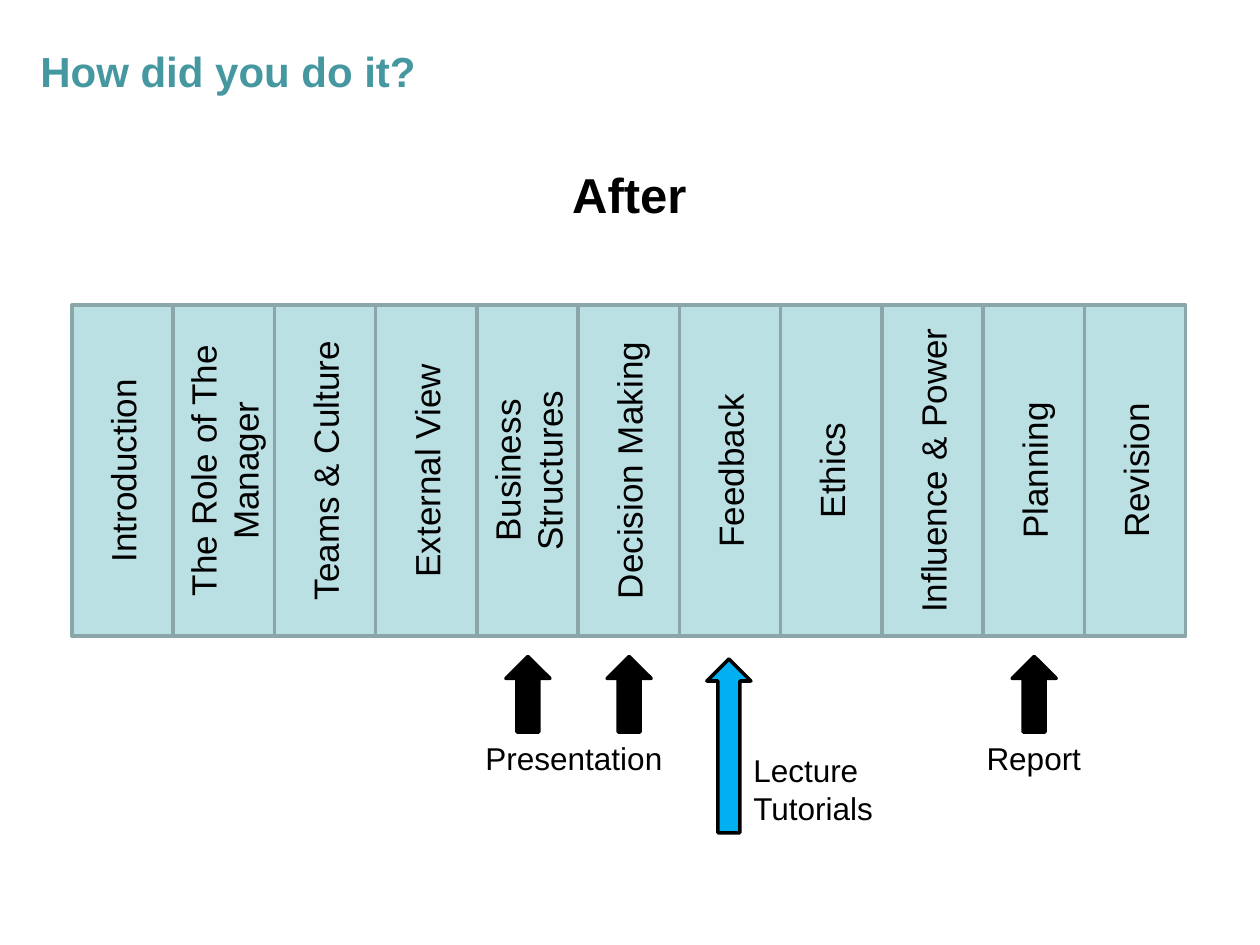
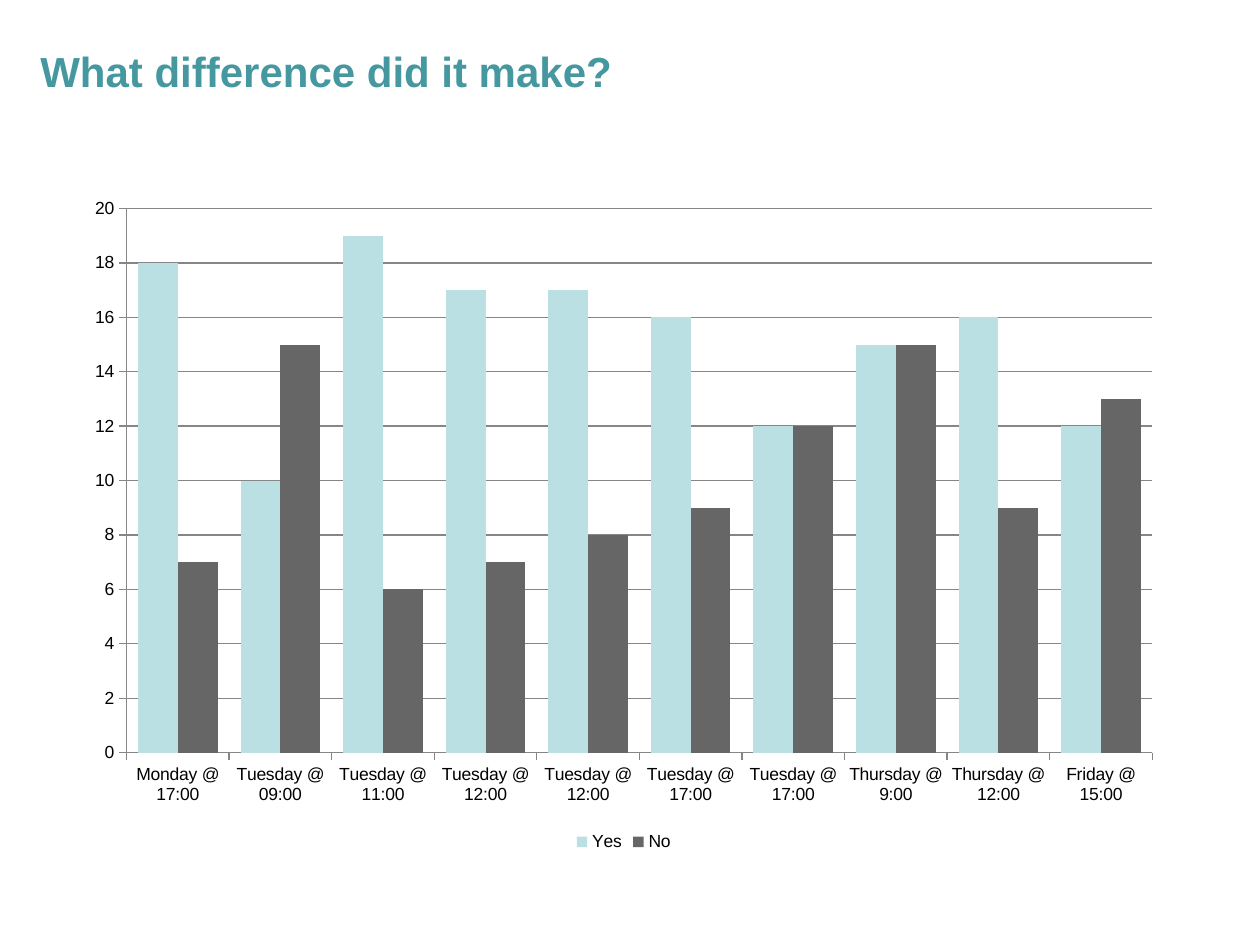
from dataclasses import dataclass

from pptx import Presentation
from pptx.chart.data import CategoryChartData
from pptx.dml.color import RGBColor
from pptx.enum.chart import XL_CHART_TYPE, XL_LEGEND_POSITION, XL_TICK_MARK
from pptx.enum.shapes import MSO_SHAPE
from pptx.enum.text import MSO_ANCHOR, MSO_AUTO_SIZE, PP_ALIGN
from pptx.util import Inches, Pt


@dataclass(frozen=True)
class Theme:
    font: str = "Arial"
    title: str = "4597A0"
    text: str = "000000"
    primary: str = "BBE0E3"
    secondary: str = "666666"
    outline: str = "8AA6A8"
    highlight: str = "00B0F0"
    grid: str = "868686"
    title_size: int = 24
    heading_size: int = 28
    step_size: int = 20
    label_size: int = 18
    chart_size: int = 10
    line_width: int = 2


class Deck:
    def __init__(self, theme):
        self.theme = theme
        self.presentation = Presentation()
        self.presentation.slide_width = Inches(10)
        self.presentation.slide_height = Inches(7.5)
        self.slide = None

    def style_font(self, font, size, color, bold=False):
        font.name = self.theme.font
        font.size = Pt(size)
        font.bold = bold
        font.color.rgb = RGBColor.from_string(color)

    def add_lines(self, text_frame, lines, size, color, align, bold=False):
        for index, line in enumerate(lines):
            paragraph = text_frame.paragraphs[0] if index == 0 else text_frame.add_paragraph()
            paragraph.alignment = align
            run = paragraph.add_run()
            run.text = line
            self.style_font(run.font, size, color, bold)

    def add_slide(self, title, title_width):
        layout = self.presentation.slide_layouts[5]
        self.slide = self.presentation.slides.add_slide(layout)
        shape = self.slide.shapes.title
        shape.left, shape.top = Inches(0.22), Inches(0.31)
        shape.width, shape.height = Inches(title_width), Inches(0.5)
        text_frame = shape.text_frame
        text_frame.auto_size = MSO_AUTO_SIZE.NONE
        text_frame.word_wrap = False
        text_frame.vertical_anchor = MSO_ANCHOR.TOP
        self.add_lines(text_frame, [title], self.theme.title_size, self.theme.title,
                       PP_ALIGN.LEFT, True)

    def add_shape(self, kind, left, top, width, height, fill, line):
        shape = self.slide.shapes.add_shape(
            kind, Inches(left), Inches(top), Inches(width), Inches(height))
        shape.shadow.inherit = False
        shape.fill.solid()
        shape.fill.fore_color.rgb = RGBColor.from_string(fill)
        shape.line.color.rgb = RGBColor.from_string(line)
        shape.line.width = Pt(self.theme.line_width)
        return shape

    def add_step(self, text, left, top, width, height):
        shape = self.add_shape(MSO_SHAPE.RECTANGLE, left, top, width, height,
                               self.theme.primary, self.theme.outline)
        text_frame = shape.text_frame
        text_frame.word_wrap = True
        text_frame.vertical_anchor = MSO_ANCHOR.MIDDLE
        text_frame._txBody.bodyPr.set("vert", "vert270")
        self.add_lines(text_frame, [text], self.theme.step_size, self.theme.text,
                       PP_ALIGN.CENTER)

    def add_arrow(self, left, top, height, fill):
        self.add_shape(MSO_SHAPE.UP_ARROW, left, top, 0.35, height, fill, self.theme.text)

    def add_label(self, lines, left, top, width, height, size,
                  align=PP_ALIGN.CENTER, bold=False):
        box = self.slide.shapes.add_textbox(
            Inches(left), Inches(top), Inches(width), Inches(height))
        box.text_frame.word_wrap = True
        self.add_lines(box.text_frame, lines, size, self.theme.text, align, bold)

    def add_column_chart(self, categories, series_values, left, top, width, height):
        data = CategoryChartData()
        data.categories = categories
        for name, values in series_values.items():
            data.add_series(name, values)
        chart = self.slide.shapes.add_chart(
            XL_CHART_TYPE.COLUMN_CLUSTERED, Inches(left), Inches(top),
            Inches(width), Inches(height), data).chart
        self.style_font(chart.font, self.theme.chart_size, self.theme.text)
        chart.has_title = False
        chart.has_legend = True
        chart.legend.position = XL_LEGEND_POSITION.BOTTOM
        chart.legend.include_in_layout = False
        plot = chart.plots[0]
        plot.gap_width = 58
        plot.overlap = 0
        plot.vary_by_categories = False
        for series, color in zip(plot.series, (self.theme.primary, self.theme.secondary)):
            series.format.fill.solid()
            series.format.fill.fore_color.rgb = RGBColor.from_string(color)
        value_axis = chart.value_axis
        value_axis.minimum_scale = 0
        value_axis.maximum_scale = 20
        value_axis.major_unit = 2
        value_axis.has_major_gridlines = True
        for axis in (value_axis, chart.category_axis):
            axis.major_tick_mark = XL_TICK_MARK.OUTSIDE
        for part in (value_axis, chart.category_axis, value_axis.major_gridlines):
            part.format.line.color.rgb = RGBColor.from_string(self.theme.grid)
            part.format.line.width = Pt(0.75)


def build_course_slide(deck):
    theme = deck.theme
    topics = ["Introduction", "The Role of The Manager", "Teams & Culture",
              "External View", "Business Structures", "Decision Making", "Feedback",
              "Ethics", "Influence & Power", "Planning", "Revision"]
    first_left, last_right = 0.57, 9.41
    step_width = (last_right - first_left) / len(topics)
    deck.add_slide("How did you do it?", 3.2)
    for index, topic in enumerate(topics):
        deck.add_step(topic, first_left + index * step_width, 2.42, step_width, 2.63)
    for topic in ("Business Structures", "Decision Making", "Planning"):
        arrow_left = first_left + topics.index(topic) * step_width + 0.23
        deck.add_arrow(arrow_left, 5.21, 0.6, theme.text)
    deck.add_arrow(5.61, 5.23, 1.38, theme.highlight)
    deck.add_label(["Presentation"], 3.57, 5.82, 1.97, 0.4, theme.label_size)
    deck.add_label(["Report"], 7.22, 5.82, 1.97, 0.4, theme.label_size)
    deck.add_label(["After"], 4.01, 1.26, 1.97, 0.57, theme.heading_size, bold=True)
    deck.add_label(["Lecture", "Tutorials"], 5.88, 5.91, 1.61, 0.71,
                   theme.label_size, PP_ALIGN.LEFT)


def build_results_slide(deck):
    sessions = ["Monday @ 17:00", "Tuesday @ 09:00", "Tuesday @ 11:00",
                "Tuesday @ 12:00", "Tuesday @ 12:00", "Tuesday @ 17:00",
                "Tuesday @ 17:00", "Thursday @ 9:00", "Thursday @ 12:00",
                "Friday @ 15:00"]
    answers = {"Yes": [18, 10, 19, 17, 17, 16, 12, 15, 16, 12],
               "No": [7, 15, 6, 7, 8, 9, 12, 15, 9, 13]}
    deck.add_slide("What difference did it make?", 4.78)
    deck.add_column_chart(sessions, answers, 0.58, 1.47, 8.74, 5.33)


def main():
    deck = Deck(Theme())
    build_course_slide(deck)
    build_results_slide(deck)
    deck.presentation.save("out.pptx")


if __name__ == "__main__":
    main()
